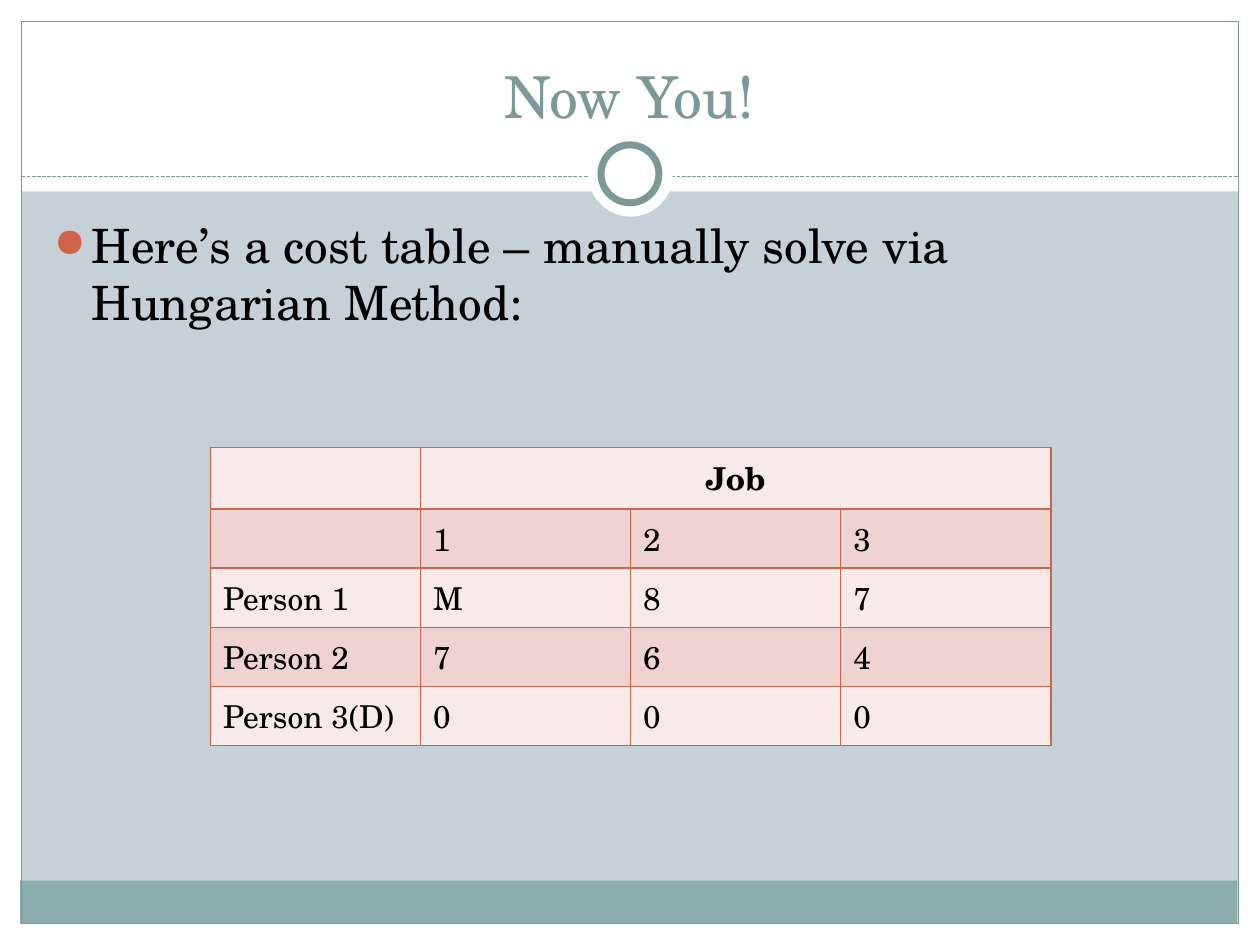
from lxml.etree import SubElement
from pptx import Presentation
from pptx.dml.color import RGBColor
from pptx.enum.dml import MSO_LINE
from pptx.enum.shapes import MSO_CONNECTOR, MSO_SHAPE
from pptx.enum.text import MSO_ANCHOR, PP_ALIGN
from pptx.oxml.ns import qn
from pptx.util import Inches, Pt

FONT = "TeX Gyre Schola"
COLORS = {
    "background": "C5D1D7",
    "white": "FFFFFF",
    "black": "000000",
    "footer": "8CADAE",
    "teal": "7C999A",
    "rust": "D16349",
    "light": "F7EAE9",
    "dark": "EED3D0",
}
COSTS = [
    ["", "Job", "", ""],
    ["", "1", "2", "3"],
    ["Person 1", "M", "8", "7"],
    ["Person 2", "7", "6", "4"],
    ["Person 3(D)", "0", "0", "0"],
]


def rgb(name):
    """Return the named colour."""
    return RGBColor.from_string(COLORS[name])


def add_panel(slide, kind, box, fill=None, line=None, weight=0.75):
    """Add a preset shape with an optional fill and outline."""
    panel = slide.shapes.add_shape(kind, *map(Inches, box))
    panel.shadow.inherit = False
    if fill:
        panel.fill.solid()
        panel.fill.fore_color.rgb = rgb(fill)
    else:
        panel.fill.background()
    if line:
        panel.line.color.rgb = rgb(line)
        panel.line.width = Pt(weight)
    else:
        panel.line.fill.background()


def add_divider(slide, left, right, y):
    """Add the dashed line below the title."""
    divider = slide.shapes.add_connector(
        MSO_CONNECTOR.STRAIGHT, Inches(left), Inches(y), Inches(right), Inches(y))
    divider.line.color.rgb = rgb("teal")
    divider.line.width = Pt(0.75)
    divider.line.dash_style = MSO_LINE.SQUARE_DOT
    SubElement(divider._element.spPr, qn("a:effectLst"))


def add_run(paragraph, text, size, color="black", bold=False):
    """Add one formatted run to a paragraph."""
    run = paragraph.add_run()
    run.text = text
    run.font.name = FONT
    run.font.size = Pt(size)
    run.font.bold = bold
    run.font.color.rgb = rgb(color)


def add_text_box(slide, box, anchor):
    """Add a wrapping text box and return its first paragraph."""
    frame = slide.shapes.add_textbox(*map(Inches, box)).text_frame
    frame.word_wrap = True
    frame.vertical_anchor = anchor
    return frame.paragraphs[0]


def add_bullet(paragraph):
    """Give a paragraph a hanging rust bullet."""
    props = paragraph._p.get_or_add_pPr()
    props.set("marL", str(Inches(0.3)))
    props.set("indent", str(Inches(-0.3)))
    color = SubElement(props, qn("a:buClr"))
    SubElement(color, qn("a:srgbClr"), val=COLORS["rust"])
    SubElement(props, qn("a:buSzPct"), val="85000")
    SubElement(props, qn("a:buChar"), char="●")


def style_cell(cell, fill):
    """Draw the borders of a cell and fill it."""
    props = cell._tc.get_or_add_tcPr()
    for side in ("lnL", "lnR", "lnT", "lnB"):
        border = SubElement(props, qn(f"a:{side}"), w=str(Pt(1)))
        solid = SubElement(border, qn("a:solidFill"))
        SubElement(solid, qn("a:srgbClr"), val=COLORS["rust"])
    cell.fill.solid()
    cell.fill.fore_color.rgb = rgb(fill)


def add_cost_table(slide):
    """Add the cost table with its merged job heading."""
    heights = [0.49] + [0.47] * 4
    table = slide.shapes.add_table(
        len(COSTS), len(COSTS[0]), Inches(1.67), Inches(3.55),
        Inches(6.67), Inches(sum(heights))).table
    for row, height in zip(table.rows, heights):
        row.height = Inches(height)
    for r, values in enumerate(COSTS):
        for c, value in enumerate(values):
            cell = table.cell(r, c)
            style_cell(cell, "dark" if r % 2 else "light")
            paragraph = cell.text_frame.paragraphs[0]
            if value:
                add_run(paragraph, value, 18, bold=r == 0)
    job = table.cell(0, 1)
    job.merge(table.cell(0, 3))
    job.text_frame.paragraphs[0].alignment = PP_ALIGN.CENTER
    job.vertical_anchor = MSO_ANCHOR.MIDDLE


def add_frame(slide):
    """Add the margins, footer band, border and title ornament."""
    slide.background.fill.solid()
    slide.background.fill.fore_color.rgb = rgb("background")
    for margin in [(0, 7.33, 10, 0.17), (0, 0, 10, 1.52),
                   (0, 0, 0.17, 7.5), (9.83, 0, 0.17, 7.5)]:
        add_panel(slide, MSO_SHAPE.RECTANGLE, margin, "white")
    add_panel(slide, MSO_SHAPE.RECTANGLE, (0.16, 6.99, 9.66, 0.34), "footer")
    add_panel(slide, MSO_SHAPE.RECTANGLE, (0.17, 0.17, 9.66, 7.16), line="teal")
    add_divider(slide, 0.17, 9.83, 1.4)
    add_panel(slide, MSO_SHAPE.OVAL, (4.67, 1.05, 0.67, 0.67), "white")
    add_panel(slide, MSO_SHAPE.OVAL, (4.77, 1.15, 0.46, 0.46), "white", "teal", 4)


def main():
    """Build and save the slide."""
    deck = Presentation()
    deck.slide_width, deck.slide_height = Inches(10), Inches(7.5)
    slide = deck.slides.add_slide(deck.slide_layouts[6])
    add_frame(slide)
    title = add_text_box(slide, (0.33, 0.25, 9.33, 0.83), MSO_ANCHOR.BOTTOM)
    title.alignment = PP_ALIGN.CENTER
    add_run(title, "Now You!", 33, "teal")
    task = add_text_box(slide, (0.33, 1.67, 9.3, 5), MSO_ANCHOR.TOP)
    add_bullet(task)
    add_run(task, "Here’s a cost table – manually solve via Hungarian Method:", 27)
    add_cost_table(slide)
    deck.save("out.pptx")


if __name__ == "__main__":
    main()
